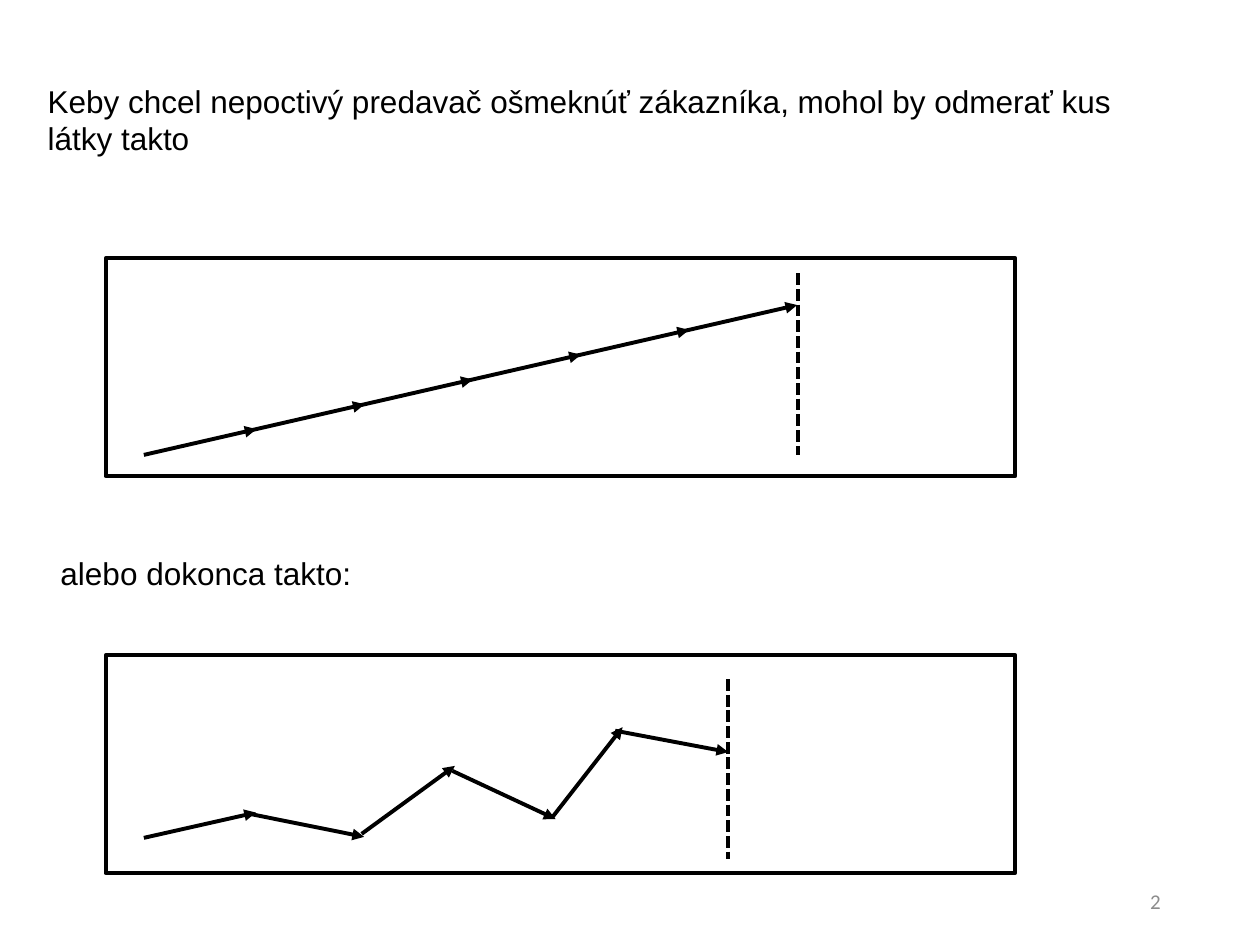
"""Build a slide on two dishonest ways of measuring a piece of cloth."""
from dataclasses import dataclass

from lxml import etree
from pptx import Presentation
from pptx.dml.color import RGBColor
from pptx.enum.dml import MSO_LINE
from pptx.enum.shapes import MSO_CONNECTOR, MSO_SHAPE
from pptx.enum.text import MSO_ANCHOR, PP_ALIGN
from pptx.oxml.ns import qn
from pptx.util import Cm, Pt

LINE = MSO_CONNECTOR.STRAIGHT
RECT = MSO_SHAPE.RECTANGLE
DASH = MSO_LINE.SQUARE_DOT
LEFT, RIGHT = PP_ALIGN.LEFT, PP_ALIGN.RIGHT
TOP, MIDDLE = MSO_ANCHOR.TOP, MSO_ANCHOR.MIDDLE
BLACK, GREY = "000000", "8C8C8C"
BODY = {"name": "Arial", "size": Pt(18)}
SMALL = {"name": "Calibri", "size": Pt(12)}


@dataclass
class Seg:
    """A straight segment, in centimetres."""
    x1: float
    y1: float
    x2: float
    y2: float


@dataclass
class Label:
    """A text with its box, in centimetres, and its format."""
    text: str
    box: tuple
    font: dict
    color: str = BLACK
    align: PP_ALIGN = LEFT
    anchor: MSO_ANCHOR = TOP


@dataclass
class Cloth:
    """A piece of cloth with its measuring steps and its cutting line."""
    top: float
    steps: list
    cut: Seg


def paint(target, code: str) -> None:
    """Give a colour format a hex colour."""
    target.rgb = RGBColor.from_string(code)


def stroke(line) -> None:
    """Give a line the common black pen."""
    paint(line.color, BLACK)
    line.width = Pt(2.25)


def draw_line(slide, seg: Seg, arrow: bool) -> None:
    """Draw a segment as an arrow or as a dashed line."""
    ends = (seg.x1, seg.y1, seg.x2, seg.y2)
    link = slide.shapes.add_connector(LINE, *map(Cm, ends))
    stroke(link.line)
    if arrow:
        tip = etree.SubElement(link.line._get_or_add_ln(), qn("a:tailEnd"))
        tip.set("type", "triangle")
    else:
        link.line.dash_style = DASH
    etree.SubElement(link._element.spPr, qn("a:effectLst"))


def draw_cloth(slide, cloth: Cloth) -> None:
    """Draw the cloth, its steps and its cut."""
    box = (2.13, cloth.top, 18.34, 4.39)
    shape = slide.shapes.add_shape(RECT, *map(Cm, box))
    shape.shadow.inherit = False
    shape.fill.background()
    stroke(shape.line)
    for step in cloth.steps:
        draw_line(slide, step, True)
    draw_line(slide, cloth.cut, False)


def draw_label(slide, label: Label) -> None:
    """Draw a text box."""
    frame = slide.shapes.add_textbox(*map(Cm, label.box)).text_frame
    frame.word_wrap = True
    frame.vertical_anchor = label.anchor
    para = frame.paragraphs[0]
    para.alignment = label.align
    run = para.add_run()
    run.text = label.text
    for key, value in label.font.items():
        setattr(run.font, key, value)
    paint(run.font.color, label.color)


def slant(count: int) -> list:
    """Return equal steps along one rising line."""
    starts = [(2.9 + 2.18 * i, 9.17 - 0.5 * i) for i in range(count)]
    return [Seg(x, y, x + 2.27, y - 0.52) for x, y in starts]


LABELS = [
    Label("Keby chcel nepoctivý predavač ošmeknúť zákazníka, "
          "mohol by odmerať kus látky takto", (0.71, 1.52, 22.81, 1.8), BODY),
    Label("alebo dokonca takto:", (0.97, 11.05, 22.05, 1.02), BODY),
    Label("2", (17.93, 17.65, 5.72, 1.02), SMALL, GREY, RIGHT, MIDDLE),
]
ZIGZAG = [
    Seg(2.9, 16.89, 5.16, 16.38),
    Seg(5.05, 16.41, 7.34, 16.87),
    Seg(7.29, 16.81, 9.17, 15.44),
    Seg(9.12, 15.54, 11.2, 16.51),
    Seg(11.13, 16.48, 12.55, 14.66),
    Seg(12.4, 14.73, 14.68, 15.16),
]
CLOTHS = [
    Cloth(5.21, slant(6), Seg(16.08, 5.51, 16.08, 9.17)),
    Cloth(13.21, ZIGZAG, Seg(14.68, 13.69, 14.68, 17.32)),
]


def main() -> None:
    """Build and save the slide."""
    deck = Presentation()
    deck.slide_width, deck.slide_height = Cm(25.4), Cm(19.05)
    slide = deck.slides.add_slide(deck.slide_layouts[6])
    for cloth in CLOTHS:
        draw_cloth(slide, cloth)
    for label in LABELS:
        draw_label(slide, label)
    deck.save("out.pptx")


if __name__ == "__main__":
    main()
